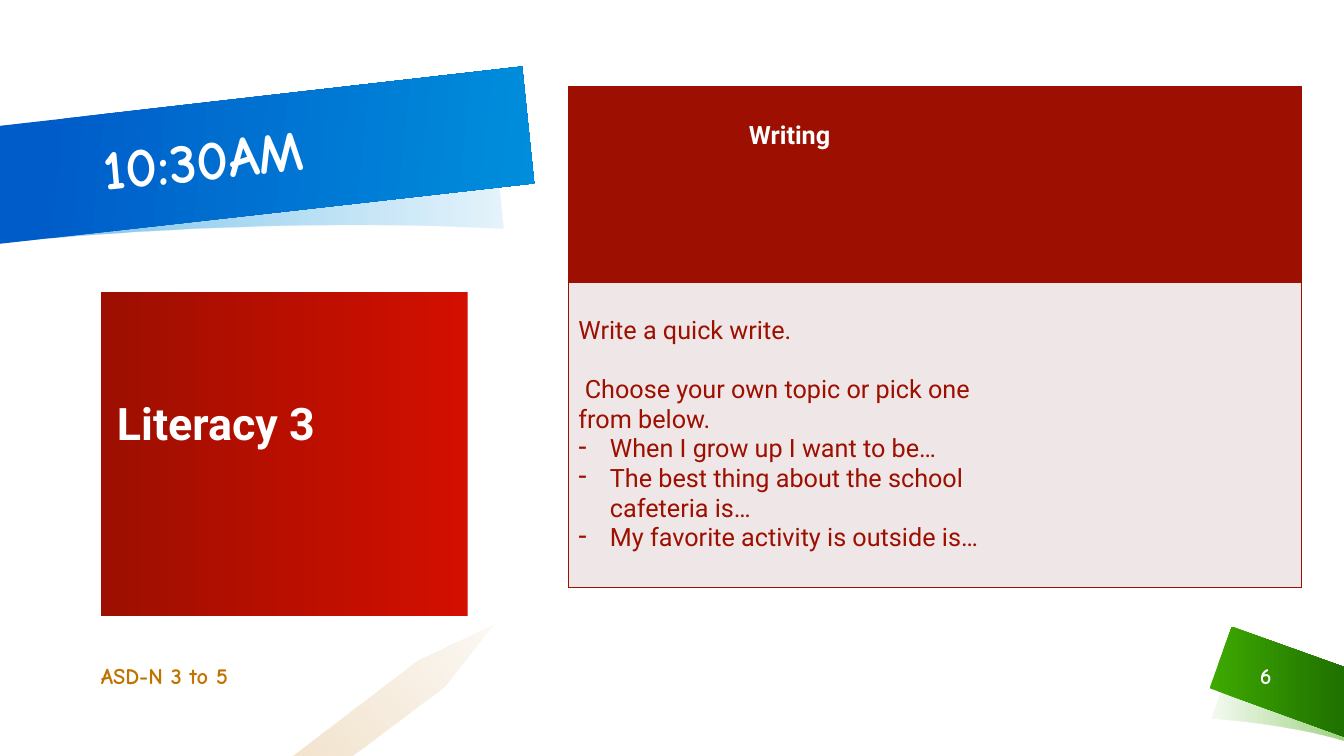
from lxml.etree import SubElement
from pptx import Presentation
from pptx.dml.color import RGBColor
from pptx.enum.shapes import MSO_SHAPE
from pptx.enum.text import MSO_ANCHOR, MSO_AUTO_SIZE, PP_ALIGN
from pptx.oxml.ns import qn
from pptx.util import Pt

COLORS = {
    "red": "9D0F00", "bright": "D30F00", "pale": "EFE7E7", "white": "FFFFFF",
    "blue": "005CC9", "sky": "008EDC", "green": "3DA800", "moss": "1F7100",
    "gold": "C07400",
}
HAND, SANS = "Comic Neue", "Roboto"


def rgb(name):
    return RGBColor.from_string(COLORS[name])


def blend(shape, stops, angle=0):
    """Fill with two stops of (position, colour, opacity), angle clockwise."""
    shape.shadow.inherit = False
    shape.line.fill.background()
    shape.fill.gradient()
    shape.fill.gradient_angle = -angle % 360
    for stop, (pos, color, _) in zip(shape.fill.gradient_stops, stops):
        stop.position = pos / 100
        stop.color.rgb = rgb(color)
    marks = shape.element.iter(qn("a:srgbClr"))
    for mark, (_, _, opaque) in zip(marks, stops):
        if opaque < 100:
            SubElement(mark, qn("a:alpha")).set("val", str(opaque * 1000))


def trace(steps, count=24):
    """Turn points and cubic curves (six numbers) into a list of points."""
    points = []
    for step in steps:
        if len(step) == 2:
            points.append(step)
            continue
        knots = [points[-1], step[:2], step[2:4], step[4:]]
        for i in range(1, count + 1):
            t = i / count
            parts = ((1 - t) ** 3, 3 * t * (1 - t) ** 2, 3 * t * t * (1 - t), t ** 3)
            points.append(tuple(sum(p * k[axis] for p, k in zip(parts, knots))
                                for axis in (0, 1)))
    return points


def outline(slide, left, top, steps, stops, angle=0):
    points = [(Pt(left + x), Pt(top + y)) for x, y in trace(steps)]
    pen = slide.shapes.build_freeform(*points[0])
    pen.add_line_segments(points[1:], close=True)
    blend(pen.convert_to_shape(), stops, angle)


def write(para, text, font, size, color, bold=True):
    run = para.add_run()
    run.text = text
    run.font.name = font
    run.font.size = Pt(size)
    run.font.bold = bold
    run.font.color.rgb = rgb(color)


def setup(frame, insets):
    frame.word_wrap = True
    frame.auto_size = MSO_AUTO_SIZE.NONE
    frame.vertical_anchor = MSO_ANCHOR.MIDDLE
    (frame.margin_left, frame.margin_top,
     frame.margin_right, frame.margin_bottom) = map(Pt, insets)
    return frame.paragraphs[0]


def corner(slide, left, top):
    outline(slide, left, top,
            [(1.4, 65.6), (1.4, 65.6, 56.2, 69.2, 95.8, 81.4), (95.8, 33.2),
             (51.8, 20.9, 17.3, 21.6, 17.3, 21.6)],
            [(3, "green", 6), (100, "green", 50)])
    outline(slide, left, top, [(0, 44), (15.8, 0), (96, 28.8), (96, 78.6)],
            [(3, "green", 100), (100, "moss", 100)])


def ribbon(slide, left, top):
    outline(slide, left, top,
            [(360, 115.9), (351.3, 33.9), (351.3, 33.9, 226.1, 20.2, -0.7, 42.5),
             (-0.7, 126), (205.2, 105.1, 360, 115.9, 360, 115.9)],
            [(0, "sky", 10), (88, "sky", 50)], 180)
    outline(slide, left, top, [(0, 126.7), (382.3, 83.5), (373.7, 0), (0, 42.5)],
            [(9, "blue", 100), (100, "sky", 100)], 6)


def pencil(slide, left, top):
    outline(slide, left, top,
            [(144, 0), (90, 25.2), (0, 93.6), (43.2, 93.6), (108.7, 44.6)],
            [(0, "gold", 5), (100, "gold", 20)], 139)


def heading(slide, left, top, width, height):
    title = slide.shapes.title
    title.element.getparent().append(title.element)
    title.left, title.top = Pt(left), Pt(top)
    title.width, title.height = Pt(width), Pt(height)
    title.rotation = 354
    para = setup(title.text_frame, (7.2, 3.6, 7.2, 3.6))
    para.alignment = PP_ALIGN.LEFT
    para.line_spacing = 0.9
    write(para, "10:30AM", HAND, 40, "white")


def subject(slide, *box):
    card = slide.shapes.add_shape(MSO_SHAPE.RECTANGLE, *map(Pt, box))
    blend(card, [(0, "bright", 100), (100, "red", 100)], 180)
    para = setup(card.text_frame, (11.5, 14.4, 8.6, 54))
    para.alignment = PP_ALIGN.LEFT
    para.line_spacing = 0.9
    write(para, "Literacy 3", SANS, 32, "white")


def label(slide, box, text, color, align, inset):
    area = slide.shapes.add_textbox(*map(Pt, box))
    para = setup(area.text_frame, (inset, 3.6, 7.2, 3.6))
    para.alignment = align
    write(para, text, HAND, 16, color)


def border(cell, bare):
    """Draw the cell's sides in red, except the bare one."""
    props = cell._tc.get_or_add_tcPr()
    for side in "LRTB":
        line = SubElement(props, qn("a:ln" + side), w=str(Pt(1)))
        if side == bare:
            SubElement(line, qn("a:noFill"))
        else:
            fill = SubElement(line, qn("a:solidFill"))
            SubElement(fill, qn("a:srgbClr"), val=COLORS["red"])


def dash(para):
    props = para._p.get_or_add_pPr()
    props.set("marL", str(Pt(22.5)))
    props.set("indent", str(-Pt(22.5)))
    SubElement(props, qn("a:buChar"), char="-")


def task(slide, left, top, width, height):
    head, split = 139.5, 316
    grid = slide.shapes.add_table(2, 2, Pt(left), Pt(top), Pt(width), Pt(height)).table
    grid.columns[0].width, grid.columns[1].width = Pt(split), Pt(width - split)
    grid.rows[0].height, grid.rows[1].height = Pt(head), Pt(height - head)
    for row, color in enumerate(("red", "pale")):
        for col, bare in enumerate("RL"):
            cell = grid.cell(row, col)
            border(cell, bare)
            cell.fill.solid()
            cell.fill.fore_color.rgb = rgb(color)
            cell.margin_top = Pt(24.7)

    para = grid.cell(0, 0).text_frame.paragraphs[0]
    para.alignment = PP_ALIGN.CENTER
    write(para, "Writing", SANS, 18, "white")

    frame = grid.cell(1, 0).text_frame
    write(frame.paragraphs[0], "Write a quick write.", SANS, 18, "red", False)
    para = frame.add_paragraph()
    para.space_before = Pt(21)
    para._p.get_or_add_pPr().set("indent", str(Pt(4.5)))
    write(para, "Choose your own topic or pick one from below.", SANS, 18, "red", False)
    for topic in ("When I grow up I want to be…",
                  "The best thing about the school cafeteria is…",
                  "My favorite activity is outside is…"):
        para = frame.add_paragraph()
        dash(para)
        write(para, topic, SANS, 18, "red", False)


def main():
    deck = Presentation()
    deck.slide_width, deck.slide_height = Pt(960), Pt(540)
    slide = deck.slides.add_slide(deck.slide_layouts[5])
    corner(slide, 864, 447.6)
    ribbon(slide, -0.7, 47.5)
    pencil(slide, 208.8, 446.4)
    heading(slide, 66.2, 66.2, 311.8, 83.5)
    subject(slide, 72, 208.8, 262, 231)
    label(slide, (72, 468, 208, 29), "ASD-N 3 to 5", "gold", PP_ALIGN.LEFT, 0)
    label(slide, (879, 468, 50.4, 29), "6", "white", PP_ALIGN.CENTER, 7.2)
    task(slide, 406, 61.9, 523.5, 357.5)
    deck.save("out.pptx")


if __name__ == "__main__":
    main()
